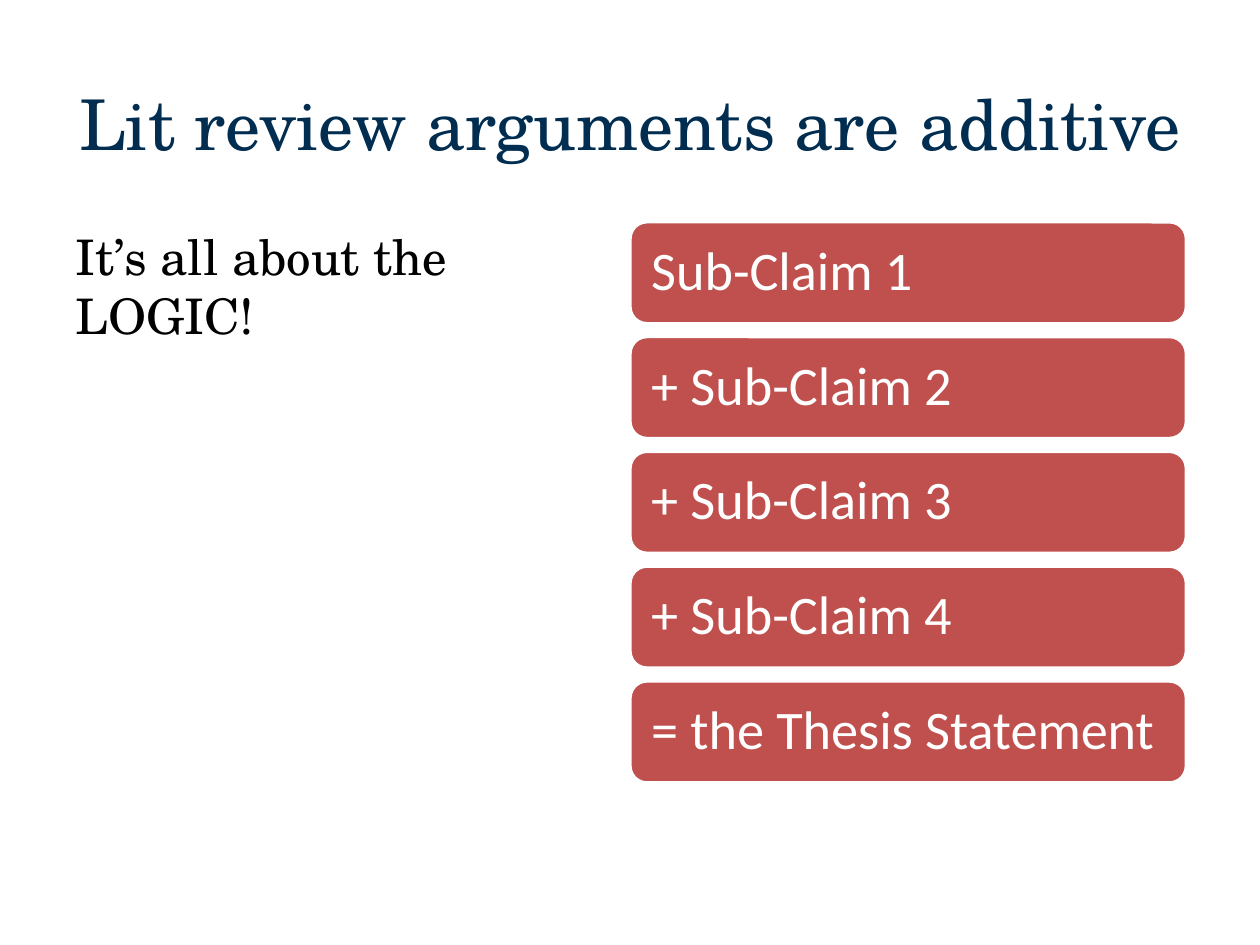
from pptx import Presentation
from pptx.dml.color import RGBColor as Rgb
from pptx.enum.shapes import MSO_SHAPE as Kind
from pptx.enum.text import MSO_ANCHOR as Anchor, PP_ALIGN as Align
from pptx.util import Pt

HUES = {"navy": "002D50", "black": "000000", "red": "C0504D", "white": "FFFFFF"}
CLAIMS = ["Sub-Claim 1", "+ Sub-Claim 2", "+ Sub-Claim 3", "+ Sub-Claim 4",
          "= the Thesis Statement"]


class Deck:
    """Holds the style and the current slide, and draws its elements."""

    serif = "TeX Gyre Schola"
    sans = "Calibri"

    def __init__(self, wide, high):
        self.prs = Presentation()
        self.prs.slide_width, self.prs.slide_height = Pt(wide), Pt(high)
        self.slide = self.prs.slides.add_slide(self.prs.slide_layouts[6])

    def hue(self, name):
        return Rgb.from_string(HUES[name])

    def letter(self, shape, text, font, size, hue, align, anchor):
        frame = shape.text_frame
        frame.word_wrap = True
        frame.vertical_anchor = anchor
        para = frame.paragraphs[0]
        para.text = text
        para.alignment = align
        para.font.name = font
        para.font.size = Pt(size)
        para.font.color.rgb = self.hue(hue)
        return para

    def label(self, box, text, size, hue, align=Align.LEFT, anchor=Anchor.TOP):
        shape = self.slide.shapes.add_textbox(*map(Pt, box))
        self.letter(shape, text, self.serif, size, hue, align, anchor)

    def claim(self, box, text):
        shape = self.slide.shapes.add_shape(Kind.ROUNDED_RECTANGLE, *map(Pt, box))
        shape.shadow.inherit = False
        shape.fill.solid()
        shape.fill.fore_color.rgb = self.hue("red")
        shape.line.color.rgb = self.hue("white")
        shape.line.width = Pt(2)
        frame = shape.text_frame
        frame.margin_left = frame.margin_right = Pt(9.3)
        frame.margin_top = frame.margin_bottom = Pt(9.3)
        para = self.letter(shape, text, self.sans, 31, "white", Align.LEFT, Anchor.MIDDLE)
        para.line_spacing = 0.9


def main():
    deck = Deck(720, 540)
    deck.label((36, 25.2, 648, 90), "Lit review arguments are additive", 40, "navy",
               Align.CENTER, Anchor.MIDDLE)
    deck.label((36, 126, 318, 356.4), "It’s all about the LOGIC!", 28, "black")
    top, step = 126.7, 65.6
    for row, text in enumerate(CLAIMS):
        deck.claim((360, top + row * step, 318, 58.3), text)
    deck.prs.save("out.pptx")


if __name__ == "__main__":
    main()
